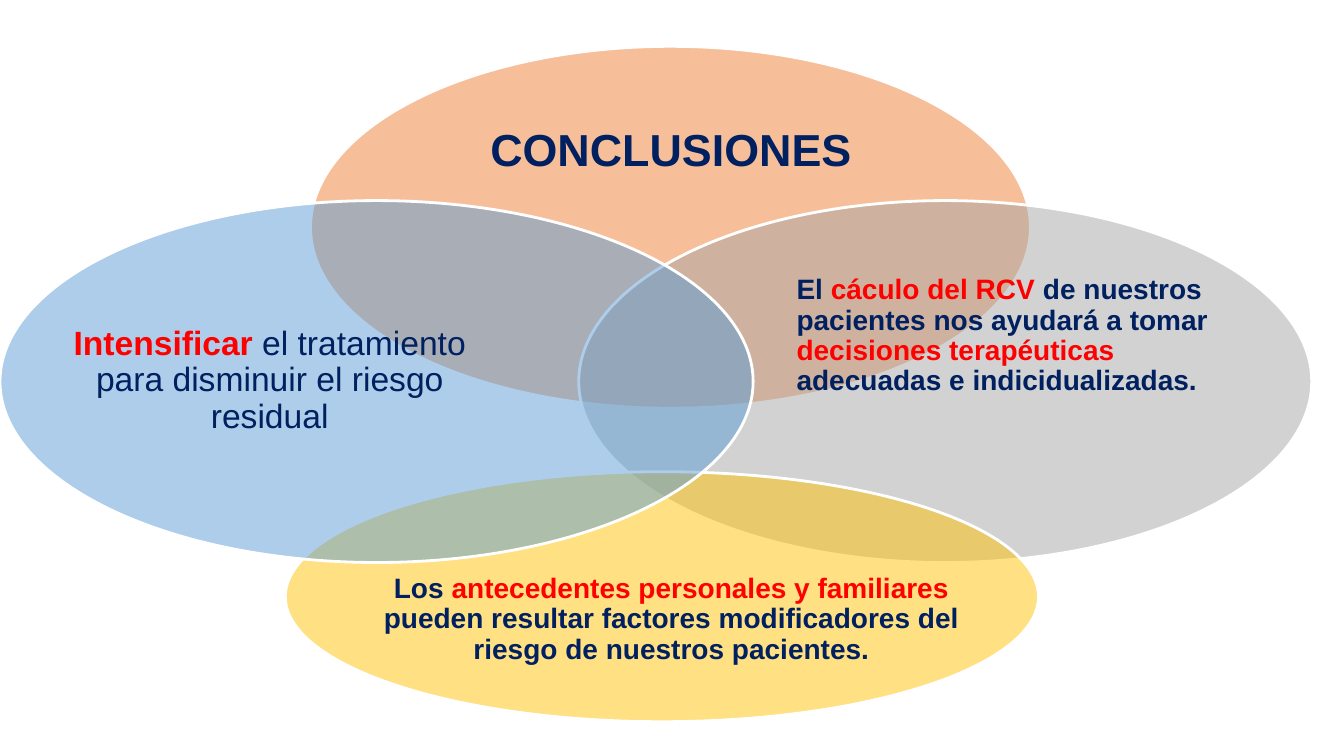
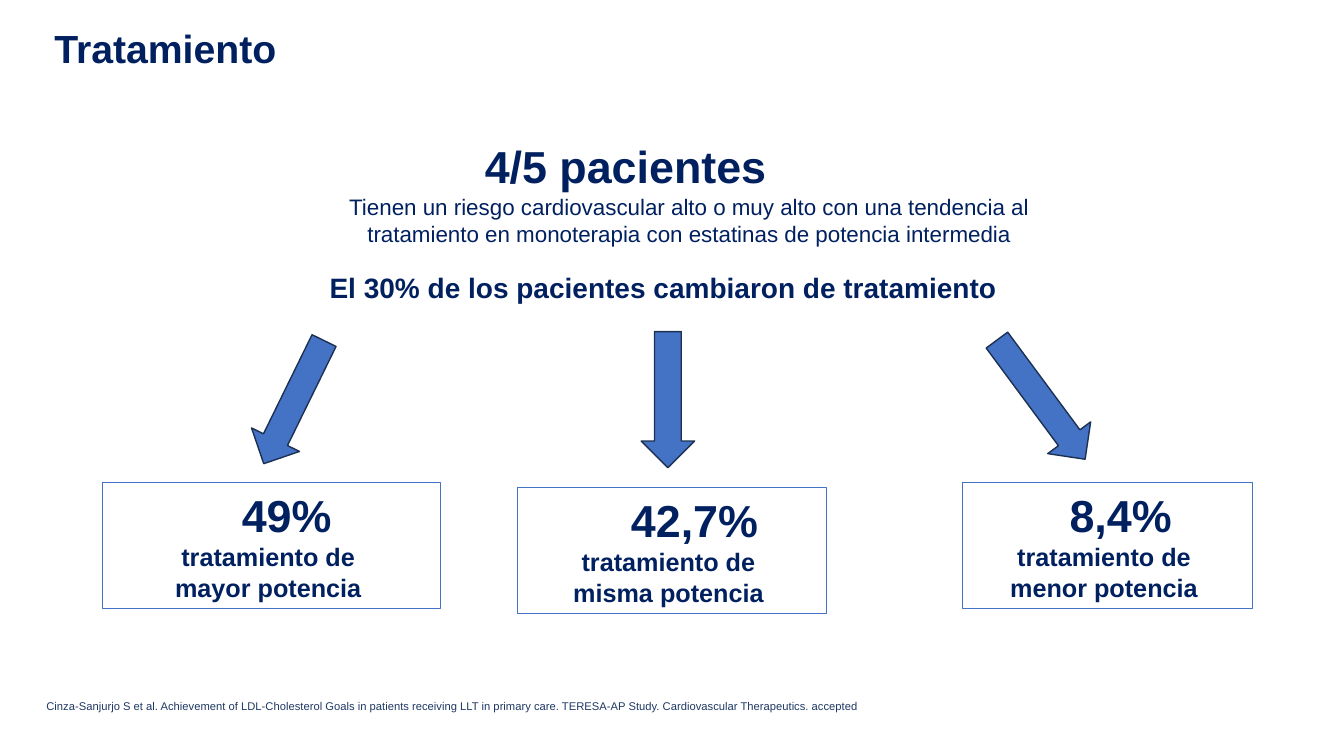
import pptx
import pptx.util
import pptx.dml.color
import pptx.enum.shapes
import pptx.enum.text
import pptx.oxml
import pptx.oxml.ns

SCALE = 9144  # EMU in one px, 100 px to the inch
KIND = pptx.enum.shapes.MSO_SHAPE
ALIGN = pptx.enum.text.PP_ALIGN
ANCHOR = pptx.enum.text.MSO_ANCHOR


class Theme:
    font = "Arial"
    navy, red, white = "002060", "FF0000", "FFFFFF"
    orange, grey, gold, sky = "ED7D31", "A5A5A5", "FFC000", "599BD5"
    blue, edge, source = "4472C4", "1C3052", "1F3864"
    huge, title, large, lead, label, body, note = 32, 28, 24, 20, 18, 16, 8
    tight = 0.9
    alpha = 49  # percent
    inset = (10, 5)


def px(*sizes):
    return [pptx.util.Emu(size * SCALE) for size in sizes]


def rgb(code):
    return pptx.dml.color.RGBColor.from_string(code)


class Deck:
    def __init__(self):
        self.file = pptx.Presentation()
        self.file.slide_width, self.file.slide_height = px(1333, 750)

    def page(self):
        self.slide = self.file.slides.add_slide(self.file.slide_layouts[6])

    def line(self, shape, color, width):
        shape.line.color.rgb = rgb(color)
        shape.line.width = pptx.util.Pt(width)

    def shape(self, kind, at, fill, edge, width):
        shape = self.slide.shapes.add_shape(kind, *px(*at))
        shape.shadow.inherit = False
        shape.fill.solid()
        shape.fill.fore_color.rgb = rgb(fill)
        self.line(shape, edge, width)
        return shape

    def oval(self, at, fill):
        shape = self.shape(KIND.OVAL, at, fill, Theme.white, 2)
        color = shape.fill._xPr.find(".//" + pptx.oxml.ns.qn("a:srgbClr"))
        alpha = pptx.oxml.parse_xml(
            "<a:alpha %s val='%d'/>" % (pptx.oxml.ns.nsdecls("a"), Theme.alpha * 1000))
        color.append(alpha)

    def arrow(self, at, turn):
        shape = self.shape(KIND.DOWN_ARROW, at, Theme.blue, Theme.edge, 1)
        shape.rotation = turn

    def text(self, at, inset=Theme.inset, anchor=ANCHOR.TOP):
        box = self.slide.shapes.add_textbox(*px(*at))
        frame = box.text_frame
        frame.word_wrap = True
        frame.vertical_anchor = anchor
        side, end = px(*inset)
        frame.margin_left = frame.margin_right = side
        frame.margin_top = frame.margin_bottom = end
        return box

    def para(self, box, runs, size, bold=True, color=Theme.navy,
             align=ALIGN.LEFT, space=None, left=0, right=0):
        """Add a paragraph; a run is text, or a pair of text and font changes."""
        frame = box.text_frame
        para = frame.paragraphs[0]
        if para.runs:
            para = frame.add_paragraph()
        para.alignment = align
        if space:
            para.line_spacing = space
        for name, size_px in (("marL", left), ("marR", right)):
            if size_px:
                para._p.get_or_add_pPr().set(name, str(size_px * SCALE))
        para.font.name = Theme.font
        para.font.size = pptx.util.Pt(size)
        para.font.color.rgb = rgb(color)
        if isinstance(runs, str):
            runs = [runs]
        mixed = any(isinstance(run, tuple) and run[1] == "strong" for run in runs)
        if not mixed:
            para.font.bold = bold
        for item in runs:
            words, mark = item if isinstance(item, tuple) else (item, None)
            run = para.add_run()
            run.text = words
            if mark:
                run.font.color.rgb = rgb(Theme.red)
            if mixed:
                run.font.bold = mark == "strong"

    def petal(self, at, fill, area, runs, size, align=ALIGN.CENTER):
        self.oval(at, fill)
        box = self.text(area, (0, 0), ANCHOR.MIDDLE)
        self.para(box, runs, size, align=align, space=Theme.tight)

    def card(self, at, value, level, left):
        box = self.text(at)
        self.line(box, Theme.blue, 0.75)
        self.para(box, value, Theme.huge, left=left)
        self.para(box, "tratamiento de", Theme.label, align=ALIGN.CENTER, right=7)
        self.para(box, level + " potencia", Theme.label, align=ALIGN.CENTER)


def close(deck):
    # Conclusions: four overlapping ovals
    deck.page()
    deck.petal((308, 46, 714, 359), Theme.orange, (391, 94, 549, 114),
               "CONCLUSIONES", Theme.huge)
    deck.petal((574, 199, 727, 359), Theme.grey, (790, 250, 415, 167),
               ["El ", ("cáculo del RCV ", "red"),
                "de nuestros pacientes nos ayudará a tomar ",
                ("decisiones terapéuticas ", "red"),
                "adecuadas e indicidualizadas."], Theme.lead, ALIGN.LEFT)
    deck.petal((283, 468, 747, 248), Theme.gold, (372, 560, 588, 110),
               ["Los ", ("antecedentes personales y familiares", "red"),
                " pueden resultar factores modificadores del riesgo"
                " de nuestros pacientes."], Theme.lead)
    deck.petal((0, 199, 747, 359), Theme.sky, (57, 240, 421, 276),
               [("Intensificar", "strong"),
                " el tratamiento para disminuir el riesgo residual"], Theme.large)


def treat(deck):
    # Title
    deck.page()
    box = deck.text((44, 24, 301, 143))
    deck.para(box, "Tratamiento", Theme.title, space=Theme.tight)

    # Outcome cards
    for at, value, level, left in (
            ((102, 479, 335, 125), "49%", "mayor", 128),
            ((513, 484, 307, 125), "42,7%", "misma", 103),
            ((955, 479, 287, 125), "8,4%", "menor", 96)):
        deck.card(at, value, level, left)

    # Arrows to the cards
    for at, turn in (((265, 331, 53, 136), 26.1),
                     ((636, 329, 53, 135), 0),
                     ((1006, 323, 53, 147), 323.5)):
        deck.arrow(at, turn)

    # Key findings
    box = deck.text((317, 263, 733, 44))
    deck.para(box, "El 30% de los pacientes cambiaron de tratamiento", Theme.lead)
    box = deck.text((281, 133, 805, 118))
    deck.para(box, "4/5 pacientes", Theme.huge, left=190)
    deck.para(box, "Tienen un riesgo cardiovascular alto o muy alto con una tendencia al"
              " tratamiento en monoterapia con estatinas de potencia intermedia",
              Theme.body, bold=False, align=ALIGN.CENTER)

    # Reference
    box = deck.text((33, 687, 1049, 40), (13, 13))
    deck.para(box, "Cinza-Sanjurjo S et al. Achievement of LDL-Cholesterol Goals in patients"
              " receiving LLT in primary care. TERESA-AP Study. Cardiovascular"
              " Therapeutics. accepted", Theme.note, bold=False, color=Theme.source)


def main():
    deck = Deck()
    close(deck)
    treat(deck)
    deck.file.save("out.pptx")


if __name__ == "__main__":
    main()
